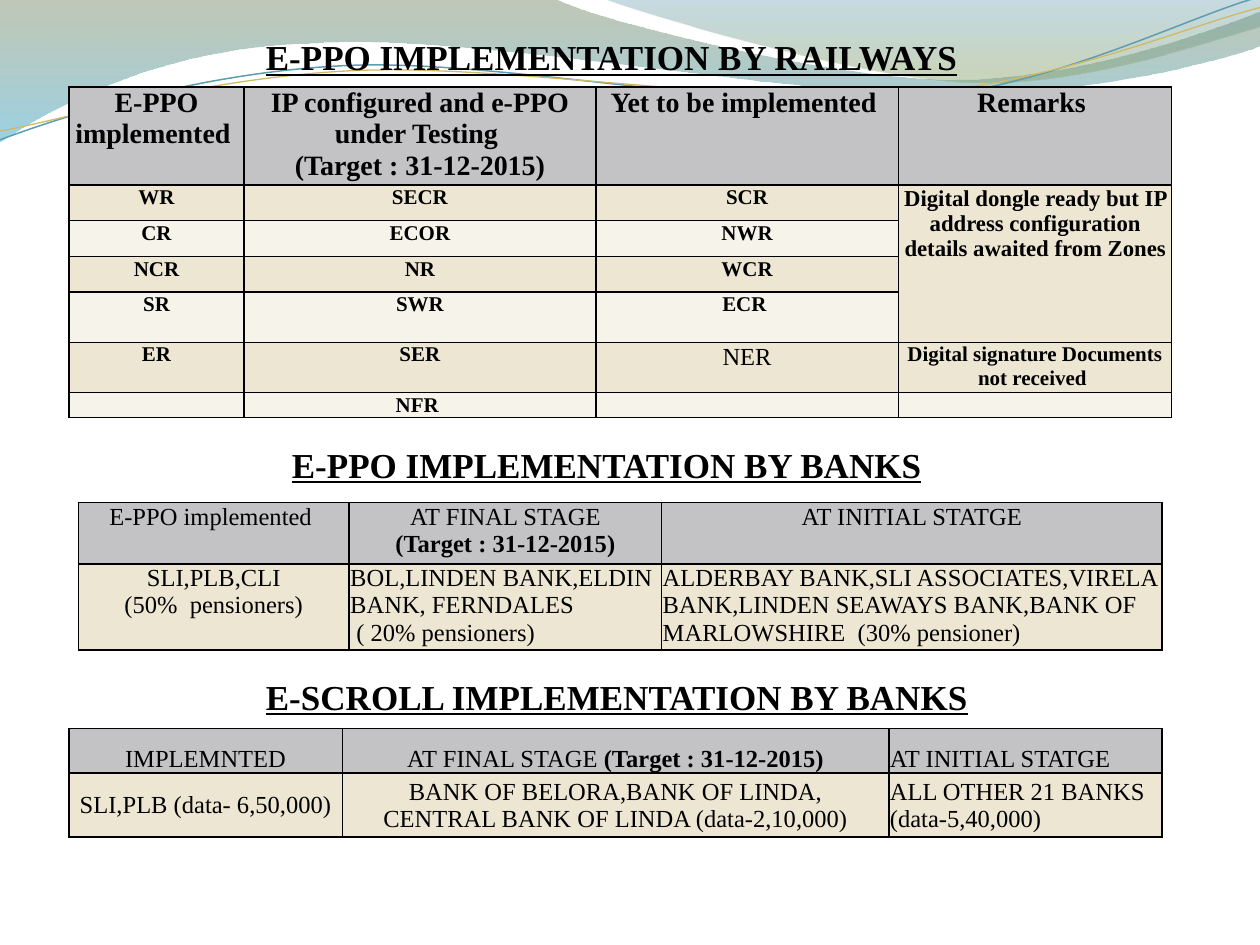
import pptx
import pptx.util
import pptx.dml.color
import pptx.enum.text
from lxml import etree
from pptx.oxml.ns import qn

Cm, Pt = pptx.util.Cm, pptx.util.Pt
RGBColor = pptx.dml.color.RGBColor
ALIGN = pptx.enum.text.PP_ALIGN
ANCHOR = pptx.enum.text.MSO_ANCHOR

FONT = "Times New Roman"
BLACK = RGBColor(0, 0, 0)
HEADER = RGBColor(0xC3, 0xC2, 0xC5)
BANDS = [RGBColor(0xED, 0xE6, 0xD3), RGBColor(0xF6, 0xF3, 0xEA)]
OLIVE, SKY = RGBColor(0x74, 0x85, 0x5E), RGBColor(0x4A, 0xAC, 0xCE)
TEAL, MOSS = RGBColor(0x45, 0x88, 0x9F), RGBColor(0x8A, 0xA3, 0x6D)
BLUE_LINE, GOLD_LINE = RGBColor(0x5E, 0x9C, 0xB1), RGBColor(0xCE, 0xB9, 0x66)
TARGET = "(Target : 31-12-2015)"  # always bold

# Titles: text, left, top, width in cm
TITLES = [
    ("E-PPO IMPLEMENTATION BY RAILWAYS", 1.38, 0.6, 21.9),
    ("E-PPO IMPLEMENTATION BY BANKS", 1.59, 8.81, 21.28),
    ("E-SCROLL IMPLEMENTATION BY BANKS", 1.59, 13.49, 21.69),
]

# Tables: sizes in cm; "styles" gives (size, bold) for cells off the table's norm
TABLES = [
    dict(left=1.39, top=1.75, cols=[3.53, 7.09, 6.1, 5.51],
         rows=[1.98, 0.72, 0.72, 0.72, 1.01, 1.01, 0.51],
         header=(16, True), body=(12, True), anchors=(ANCHOR.TOP, ANCHOR.TOP),
         left_cells=[], merges=[((1, 3), (4, 3))],
         styles={(1, 3): (13, True), (5, 2): (14, False)},
         cells=[
             ["E-PPO implemented ", "IP configured and e-PPO under Testing \n" + TARGET,
              "Yet to be implemented ", "Remarks "],
             ["WR", "SECR", "SCR", "Digital dongle ready but IP address "
              "configuration details awaited from Zones"],
             ["CR", "ECOR", "NWR", ""],
             ["NCR", "NR", "WCR", ""],
             ["SR", "SWR", "ECR ", ""],
             ["ER", "SER", "NER", "Digital signature Documents not received "],
             ["", "NFR ", "", ""],
         ]),
    dict(left=1.58, top=10.13, cols=[5.46, 6.3, 10.08], rows=[1.24, 1.73],
         header=(14, False), body=(14, False), anchors=(ANCHOR.TOP, ANCHOR.TOP),
         left_cells=[(1, 1), (1, 2)], merges=[], styles={},
         cells=[
             ["E-PPO implemented ", "AT FINAL STAGE\n" + TARGET, "AT INITIAL STATGE"],
             ["SLI,PLB,CLI\n(50%  pensioners)",
              "BOL,LINDEN BANK,ELDIN BANK, FERNDALES\v ( 20% pensioners)",
              "ALDERBAY BANK,SLI ASSOCIATES,VIRELA BANK,LINDEN SEAWAYS BANK,"
              "BANK OF MARLOWSHIRE  (30% pensioner)"],
         ]),
    dict(left=1.39, top=14.69, cols=[5.51, 11.02, 5.5], rows=[0.89, 1.29],
         header=(14, False), body=(14, False), anchors=(ANCHOR.BOTTOM, ANCHOR.MIDDLE),
         left_cells=[(0, 2), (1, 2)], merges=[], styles={},
         cells=[
             ["IMPLEMNTED", "AT FINAL STAGE " + TARGET, "AT INITIAL STATGE"],
             ["SLI,PLB (data- 6,50,000)",
              "BANK OF BELORA,BANK OF LINDA,\nCENTRAL BANK OF LINDA (data-2,10,000)",
              "ALL OTHER 21 BANKS (data-5,40,000)"],
         ]),
]

# Waves in hundredths of an inch: a pair is a line's end,
# a six is a Bezier curve (two controls, end)
WAVE_UNIT = Cm(0.0254)
FILLED_WAVES = [
    ([(0, 0), (440, -1), (476, 17, 664, 63, 758, 63), (853, 63, 958, 26, 1000, 9),
      (1001, 36), (983, 44, 870, 76, 746, 75), (622, 75, 382, 28, 257, 34),
      (129, 36, 46, 83, -1, 113)],
     [(0, OLIVE, 45), (1, SKY, 55)]),
    ([(479, -1), (509, 11, 682, 62, 769, 65), (856, 69, 961, 32, 1000, 21), (1000, 0)],
     [(0, TEAL, 30), (0.8, MOSS, 45)]),
]
LINE_WAVES = [
    ([(0, 111), (48, 93, 158, 57, 277, 52), (395, 47, 593, 89, 713, 80),
      (833, 71, 938, 15, 998, -2)], BLUE_LINE, 0.85),
    ([(0, 104), (47, 96, 164, 61, 283, 56), (403, 51, 597, 84, 717, 75),
      (836, 67, 941, 21, 1000, 6)], GOLD_LINE, 0.75),
]


def add_wave(shapes, segments, close):
    points = [segment[i:i + 2] for segment in segments for i in range(0, len(segment), 2)]
    builder = shapes.build_freeform(*points[0], scale=WAVE_UNIT)
    builder.add_line_segments(points[1:], close=close)
    wave = builder.convert_to_shape()
    wave.shadow.inherit = False
    # Join each run of three points into one curve
    steps = iter(list(wave._element.spPr.iter(qn("a:lnTo"))))
    for segment in segments[1:]:
        step = next(steps)
        if len(segment) == 6:
            step.addprevious(curve := etree.Element(qn("a:cubicBezTo")))
            for part in (step, next(steps), next(steps)):
                curve.append(part[0])
                part.getparent().remove(part)
    return wave


def fill_gradient(wave, stops):
    wave.line.fill.background()
    wave.fill.gradient()
    wave.fill.gradient_angle = 270  # top to bottom
    for stop, (position, color, _) in zip(wave.fill.gradient_stops, stops):
        stop.position = position
        stop.color.rgb = color
    for rgb, (_, _, opacity) in zip(wave._element.spPr.iter(qn("a:srgbClr")), stops):
        etree.SubElement(rgb, qn("a:alpha"), val=str(opacity * 1000))


def style_run(run, size, bold, underline=False):
    run.font.name, run.font.size = FONT, Pt(size)
    run.font.bold, run.font.underline = bold, underline
    run.font.color.rgb = BLACK


def add_borders(cell):
    properties = cell._tc.get_or_add_tcPr()
    for index, side in enumerate(("lnL", "lnR", "lnT", "lnB")):
        border = etree.Element(qn("a:" + side), w=str(Pt(1)))
        solid = etree.SubElement(border, qn("a:solidFill"))
        etree.SubElement(solid, qn("a:srgbClr"), val=str(BLACK))
        properties.insert(index, border)  # borders precede the fill


def write_cell(cell, text, size, bold, align):
    lead, target, _ = text.partition(TARGET)
    cell.text_frame.text = lead
    if target:
        cell.text_frame.paragraphs[-1].add_run().text = target
    for paragraph in cell.text_frame.paragraphs:
        paragraph.alignment = align
        for run in paragraph.runs:
            style_run(run, size, bold or run.text == TARGET)
        if not text:  # keeps an empty row low
            end = etree.SubElement(paragraph._p, qn("a:endParaRPr"), sz=str(size * 100))
            etree.SubElement(end, qn("a:latin"), typeface=FONT)


def add_grid(shapes, grid):
    cols, rows = grid["cols"], grid["rows"]
    table = shapes.add_table(len(rows), len(cols), Cm(grid["left"]), Cm(grid["top"]),
                             Cm(sum(cols)), Cm(sum(rows))).table
    for column, width in zip(table.columns, cols):
        column.width = Cm(width)
    for row, height in zip(table.rows, rows):
        row.height = Cm(height)
    for r, texts in enumerate(grid["cells"]):
        for c, text in enumerate(texts):
            cell = table.cell(r, c)
            cell.margin_left = cell.margin_right = cell.margin_top = Cm(0.02)
            cell.margin_bottom = 0
            cell.vertical_anchor = grid["anchors"][r > 0]
            cell.fill.solid()
            cell.fill.fore_color.rgb = BANDS[(r - 1) % 2] if r else HEADER
            add_borders(cell)
            size, bold = grid["styles"].get((r, c), grid["body"] if r else grid["header"])
            align = ALIGN.LEFT if (r, c) in grid["left_cells"] else ALIGN.CENTER
            write_cell(cell, text, size, bold, align)
    for first, last in grid["merges"]:
        table.cell(*first).merge(table.cell(*last))


def main():
    deck = pptx.Presentation()
    deck.slide_width, deck.slide_height = Cm(25.4), Cm(19.05)
    shapes = deck.slides.add_slide(deck.slide_layouts[6]).shapes

    # Waves across the top
    for segments, stops in FILLED_WAVES:
        fill_gradient(add_wave(shapes, segments, True), stops)
    for segments, color, width in LINE_WAVES:
        wave = add_wave(shapes, segments, False)
        wave.fill.background()
        wave.line.color.rgb, wave.line.width = color, Pt(width)

    # Tables and their titles
    for grid in TABLES:
        add_grid(shapes, grid)
    for text, left, top, width in TITLES:
        frame = shapes.add_textbox(Cm(left), Cm(top), Cm(width), Cm(1.12)).text_frame
        frame.word_wrap = True
        frame.text = text
        frame.paragraphs[0].alignment = ALIGN.CENTER
        style_run(frame.paragraphs[0].runs[0], 20, True, True)

    deck.save("out.pptx")


if __name__ == "__main__":
    main()
